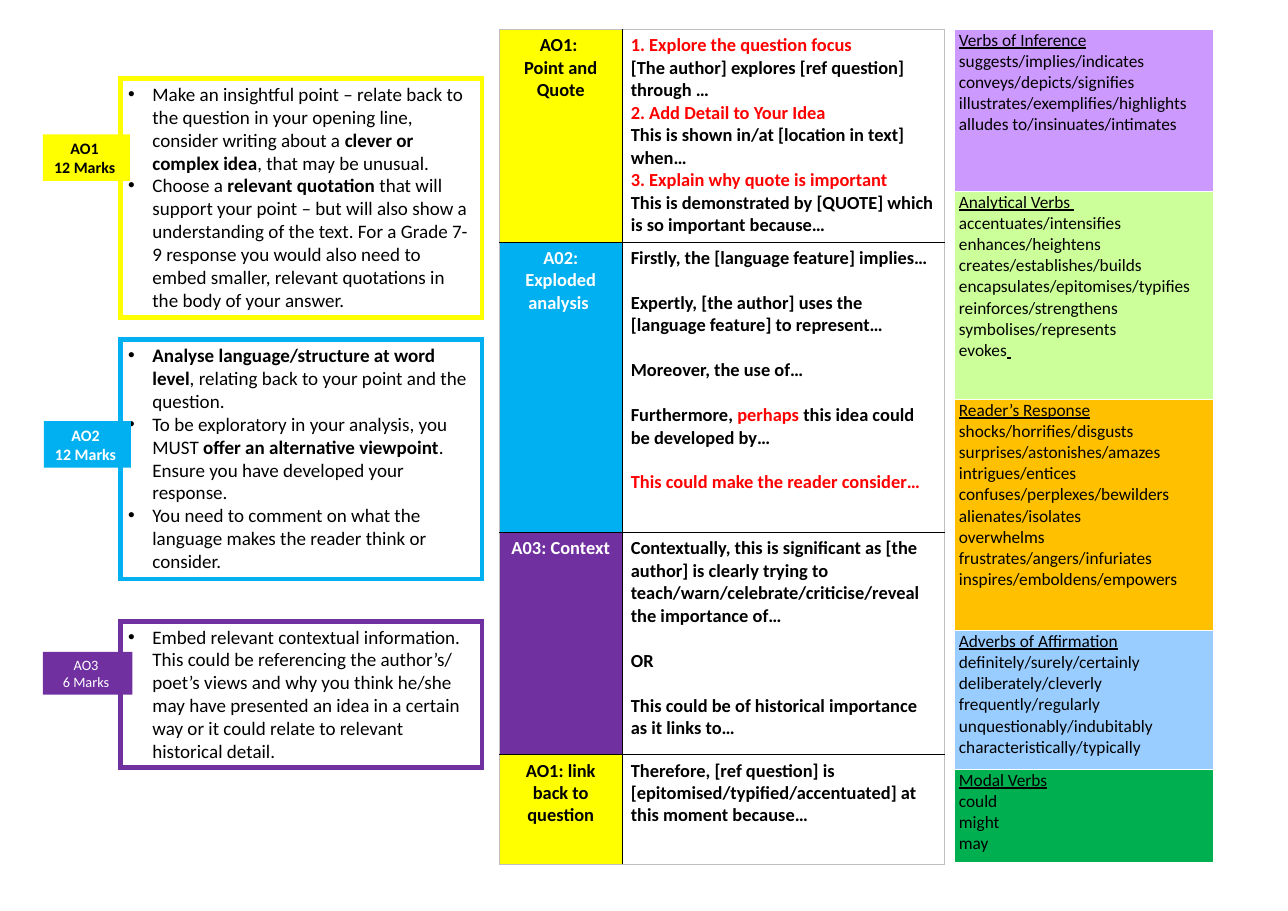
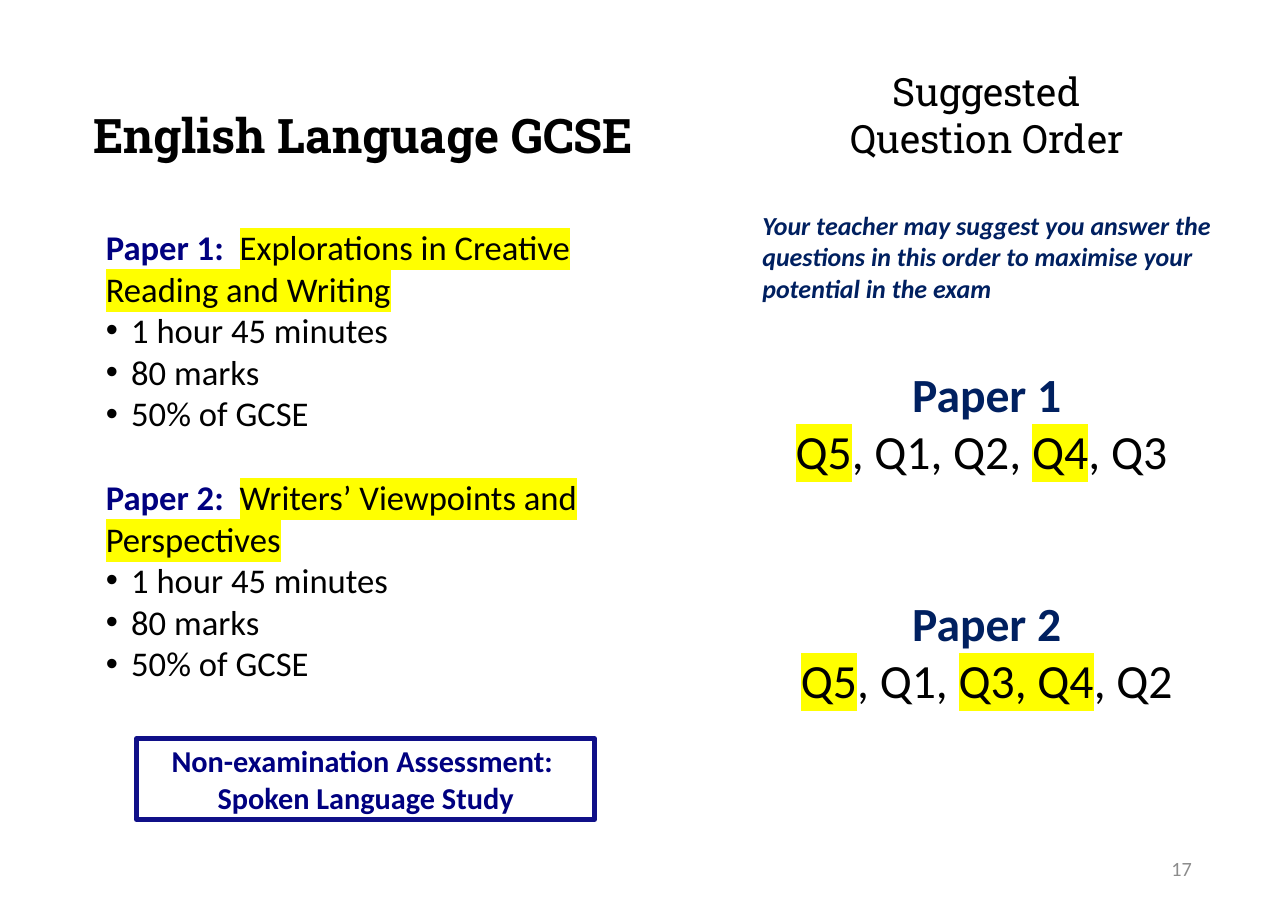
from lxml import etree
from pptx import Presentation
from pptx.dml.color import RGBColor
from pptx.enum.shapes import MSO_SHAPE
from pptx.enum.text import MSO_ANCHOR, MSO_AUTO_SIZE, PP_ALIGN
from pptx.oxml.ns import qn
from pptx.util import Cm, Pt

RECTANGLE = MSO_SHAPE.RECTANGLE
TOP, MIDDLE = MSO_ANCHOR.TOP, MSO_ANCHOR.MIDDLE
LEFT, CENTER, RIGHT = PP_ALIGN.LEFT, PP_ALIGN.CENTER, PP_ALIGN.RIGHT
BODY_FONT, TITLE_FONT = "Calibri", "Roboto Slab"
COLORS = {
    "black": "000000", "white": "FFFFFF", "yellow": "FFFF00", "blue": "00B0F0",
    "purple": "7030A0", "red": "FF0000", "lilac": "CC99FF", "lime": "CCFF99",
    "orange": "FFC000", "sky": "99CCFF", "green": "00B050", "navy": "000080",
    "frame": "101088", "ink": "002060", "grey": "8C8C8C", "silver": "BFBFBF",
}
BOLD = {"bold": True}
MARKED = {"highlight": "yellow"}


def rgb(name):
    return RGBColor.from_string(COLORS[name])


def set_fill(target, name):
    target.fill.solid()
    target.fill.fore_color.rgb = rgb(name)


def add_span(para, text, size=18, font=BODY_FONT, color="black", bold=False,
             italic=False, underline=False, highlight=None):
    span = para.add_run()
    span.text = text
    style = span.font
    style.size, style.name = Pt(size), font
    style.bold, style.italic, style.underline = bold, italic, underline
    style.color.rgb = rgb(color)
    if highlight:
        mark = etree.Element(qn("a:highlight"))
        etree.SubElement(mark, qn("a:srgbClr"), val=COLORS[highlight])
        style._element.find(qn("a:solidFill")).addnext(mark)


def set_bullet(para, indent):
    properties = para._p.get_or_add_pPr()
    properties.set("marL", str(Cm(indent)))
    properties.set("indent", str(-Cm(indent)))
    etree.SubElement(properties, qn("a:buFont"), typeface="Arial")
    etree.SubElement(properties, qn("a:buChar"), char="•")


def line(*spans, **options):
    return spans, options


def write(frame, lines, align=LEFT, bullet=None, gap=0, **style):
    frame.word_wrap = True
    for index, item in enumerate(lines):
        spans, options = line(item) if isinstance(item, str) else item
        settings = {"align": align, "bullet": bullet, "gap": gap, **style, **options}
        para = frame.paragraphs[0] if index == 0 else frame.add_paragraph()
        para.alignment = settings.pop("align")
        indent, space = settings.pop("bullet"), settings.pop("gap")
        if indent:
            set_bullet(para, indent)
        if space:
            para.space_before = Pt(space)
        for span in spans:
            text, changes = (span, {}) if isinstance(span, str) else span
            add_span(para, text, **{**settings, **changes})


def add_box(page, place, lines, fill=None, outline=None, mitred=False, anchor=TOP,
            inset_top=0.13, **style):
    lengths = [Cm(value) for value in place]
    if fill or outline:
        box = page.shapes.add_shape(RECTANGLE, *lengths)
        box.shadow.inherit = False
    else:
        box = page.shapes.add_textbox(*lengths)
    if fill:
        set_fill(box, fill)
    else:
        box.fill.background()
    if outline:
        box.line.color.rgb = rgb(outline)
        box.line.width = Pt(4.5)
    else:
        box.line.fill.background()
    if mitred:
        etree.SubElement(box.line._get_or_add_ln(), qn("a:miter"), lim="800000")
    box.text_frame.vertical_anchor = anchor
    box.text_frame.margin_top = Cm(inset_top)
    write(box.text_frame, lines, **style)


def format_cell(cell, fill, borders, margins):
    set_fill(cell, fill)
    cell.margin_left = cell.margin_right = Cm(margins[0])
    cell.margin_top = cell.margin_bottom = Cm(margins[1])
    properties = cell._tc.get_or_add_tcPr()
    for index, (side, color) in enumerate(zip(("lnL", "lnR", "lnT", "lnB"), borders)):
        edge = etree.Element(qn(f"a:{side}"), w=str(Pt(1)))
        edge_fill = etree.SubElement(edge, qn("a:solidFill"))
        etree.SubElement(edge_fill, qn("a:srgbClr"), val=COLORS[color])
        properties.insert(index, edge)


def add_grid(page, left, top, widths, heights):
    table = page.shapes.add_table(
        len(heights), len(widths), Cm(left), Cm(top),
        Cm(sum(widths)), Cm(sum(heights))).table
    table.first_row = table.horz_banding = False
    for column, width in zip(table.columns, widths):
        column.width = Cm(width)
    for row, height in zip(table.rows, heights):
        row.height = Cm(height)
    return table


OBJECTIVES = [
    (2.56, 7.8, "yellow", [
        line("Make an insightful point – relate back to the question in your opening "
             "line, consider writing about a ", ("clever or complex idea", BOLD),
             ", that may be unusual."),
        line("Choose a ", ("relevant quotation ", BOLD),
             "that will support your point – but will also show a understanding of the "
             "text. For a Grade 7-9 response you would also need to embed smaller, "
             "relevant quotations in the body of your answer."),
    ]),
    (11.08, 7.8, "blue", [
        line(("Analyse language/structure at word level", BOLD),
             ", relating back to your point and the question."),
        line("To be exploratory in your analysis, you MUST ",
             ("offer an alternative viewpoint", BOLD),
             ". Ensure you have developed your response."),
        "You need to comment on what the language makes the reader think or consider.",
    ]),
    (20.25, 4.78, "purple", [
        "Embed relevant contextual information. This could be referencing the author’s/ "
        "poet’s views and why you think he/she may have presented an idea in a certain "
        "way or it could relate to relevant historical detail.",
    ]),
]
BADGES = [
    (0, 4.38, 2.84, 1.52, "yellow", ["AO1 ", "12 Marks "],
     {"size": 14.7, "bold": True}),
    (0.03, 13.73, 2.84, 1.52, "blue", ["AO2 ", "12 Marks "],
     {"size": 14.7, "bold": True, "color": "white"}),
    (0, 21.25, 2.92, 1.4, "purple", ["AO3 ", "6 Marks "],
     {"size": 13.2, "color": "white"}),
]
ESSAY_STEPS = [
    (6.93, "yellow", "black", ["AO1: ", "Point and Quote"], [
        line("1. Explore the question focus", color="red"),
        "[The author] explores [ref question] through …",
        line("2. Add Detail to Your Idea", color="red"),
        "This is shown in/at [location in text] when…",
        line("3. Explain why quote is important", color="red"),
        "This is demonstrated by [QUOTE] which is so important because…",
    ]),
    (9.47, "blue", "white", ["A02:", "Exploded analysis "], [
        "Firstly, the [language feature] implies…",
        line("Expertly, [the author] uses the [language feature] to represent…", gap=20.7),
        line("Moreover, the use of…", gap=20.7),
        line("Furthermore, ", ("perhaps", {"color": "red"}),
             " this idea could be developed by…", gap=20.7),
        line("This could make the reader consider…", gap=20.7, color="red"),
    ]),
    (7.24, "purple", "white", ["A03: Context"], [
        "Contextually, this is significant as [the author] is clearly trying to "
        "teach/warn/celebrate/criticise/reveal the importance of…",
        line("OR", gap=20.7),
        line("This could be of historical importance as it links to…", gap=20.7),
    ]),
    (3.58, "yellow", "black", ["AO1: link back to question"], [
        "Therefore, [ref question] is [epitomised/typified/accentuated] at this "
        "moment because…",
    ]),
]
WORD_BANK = [
    (5.28, "lilac", "Verbs of Inference", [
        "suggests/implies/indicates", "conveys/depicts/signifies",
        "illustrates/exemplifies/highlights", "alludes to/insinuates/intimates"]),
    (6.78, "lime", "Analytical Verbs ", [
        "accentuates/intensifies", "enhances/heightens", "creates/establishes/builds",
        "encapsulates/epitomises/typifies", "reinforces/strengthens",
        "symbolises/represents", line("evokes", (" ", {"underline": True}))]),
    (7.54, "orange", "Reader’s Response", [
        "shocks/horrifies/disgusts", "surprises/astonishes/amazes", "intrigues/entices",
        "confuses/perplexes/bewilders", "alienates/isolates", "overwhelms",
        "frustrates/angers/infuriates", "inspires/emboldens/empowers"]),
    (4.52, "sky", "Adverbs of Affirmation", [
        "definitely/surely/certainly", "deliberately/cleverly", "frequently/regularly",
        "unquestionably/indubitably", "characteristically/typically"]),
    (3.02, "green", "Modal Verbs", ["could", "might", "may"]),
]
PAPERS = [
    ("Paper 1:  ", "Explorations in Creative Reading and Writing", 0),
    ("Paper 2:  ", "Writers’ Viewpoints and Perspectives", 39),
]
ORDERS = [
    ("Paper 1", 56.7, [("Q5", MARKED), ", Q1, Q2, ", ("Q4", MARKED), ", Q3 "]),
    ("Paper 2", 106, [("Q5", MARKED), ", Q1, ", ("Q3, Q4", MARKED), ", Q2"]),
]


def add_objectives(page, left):
    for top, height, color, lines in OBJECTIVES:
        add_box(page, (left + 2.53, top, 11.79, height), lines, outline=color,
                mitred=True, size=17.6, bullet=0.79)
    for shift, top, width, height, color, lines, style in BADGES:
        add_box(page, (left + shift, top, width, height), lines, fill=color,
                align=CENTER, **style)


def add_essay_table(page, left, top):
    table = add_grid(page, left, top, [4.01, 10.52], [step[0] for step in ESSAY_STEPS])
    last = len(ESSAY_STEPS) - 1
    for row, (_, fill, color, label, prompts) in enumerate(ESSAY_STEPS):
        label_cell, prompt_cell = table.cell(row, 0), table.cell(row, 1)
        upper = "silver" if row == 0 else "black"
        lower = "silver" if row == last else "black"
        format_cell(label_cell, fill, ("silver", "black", upper, lower), (0.28, 0.15))
        format_cell(prompt_cell, "white", ("black", "silver", upper, lower), (0.28, 0.15))
        write(label_cell.text_frame, label, align=CENTER, size=17, bold=True, color=color)
        write(prompt_cell.text_frame, prompts, size=17, bold=True)


def add_word_bank(page, left, top):
    table = add_grid(page, left, top, [8.46], [group[0] for group in WORD_BANK])
    for row, (_, fill, heading, words) in enumerate(WORD_BANK):
        cell = table.cell(row, 0)
        format_cell(cell, fill, ["white"] * 4, (0.15, 0))
        write(cell.text_frame, [line(heading, underline=True), *words], size=16)


def add_title(page, place, text):
    title = page.shapes.title
    title.left, title.top, title.width, title.height = [Cm(value) for value in place]
    set_fill(title, "white")
    title.text_frame.auto_size = MSO_AUTO_SIZE.NONE
    title.text_frame.vertical_anchor = TOP
    write(title.text_frame, [text], size=44, font=TITLE_FONT, bold=True)


def add_papers(page, left, top):
    lines = []
    for label, name, gap in PAPERS:
        lines.append(line((label, {"bold": True, "color": "navy"}), (name, MARKED), gap=gap))
        lines += [line(fact, bullet=0.83)
                  for fact in ("1 hour 45 minutes", "80 marks", "50% of GCSE")]
    add_box(page, (left, top, 17.45, 17.3), lines, fill="white", inset_top=1.3, size=32)
    add_box(page, (left + 1.25, top + 18.01, 14.94, 2.64),
            ["Non-examination Assessment:  Spoken Language Study"],
            fill="white", outline="frame", align=CENTER, size=28, bold=True, color="navy")


def add_question_order(page, left, top):
    lines = [line("Your teacher may suggest you answer the questions in this order to "
                  "maximise your potential in the exam",
                  size=24, bold=True, italic=True, color="ink")]
    for label, gap, questions in ORDERS:
        lines.append(line(label, align=CENTER, gap=gap, bold=True, color="ink"))
        lines.append(line(*questions, align=CENTER))
    add_box(page, (left, top + 4.63, 15.14, 16.66), lines, size=44)
    add_box(page, (left + 1.86, top, 11.43, 3.33), ["Suggested Question Order"],
            align=CENTER, size=36, font=TITLE_FONT)


def add_page_number(page, number):
    add_box(page, (29.67, 27.53, 9.45, 1.57), [number], anchor=MIDDLE, align=RIGHT,
            size=18.7, color="grey")


def build_objectives_page(deck):
    page = deck.slides.add_slide(deck.slide_layouts[6])
    add_objectives(page, 1.4)
    add_word_bank(page, 31.12, 0.97)
    add_essay_table(page, 16.28, 0.97)


def build_exam_page(deck):
    page = deck.slides.add_slide(deck.slide_layouts[5])
    add_title(page, (2.79, 3.33, 20.7, 4.67), "English Language GCSE")
    add_papers(page, 3.2, 6.07)
    add_question_order(page, 24.61, 2.08)
    add_page_number(page, "17")


def main():
    deck = Presentation()
    deck.slide_width, deck.slide_height = Cm(42), Cm(29.7)
    build_objectives_page(deck)
    build_exam_page(deck)
    deck.save("out.pptx")


if __name__ == "__main__":
    main()
